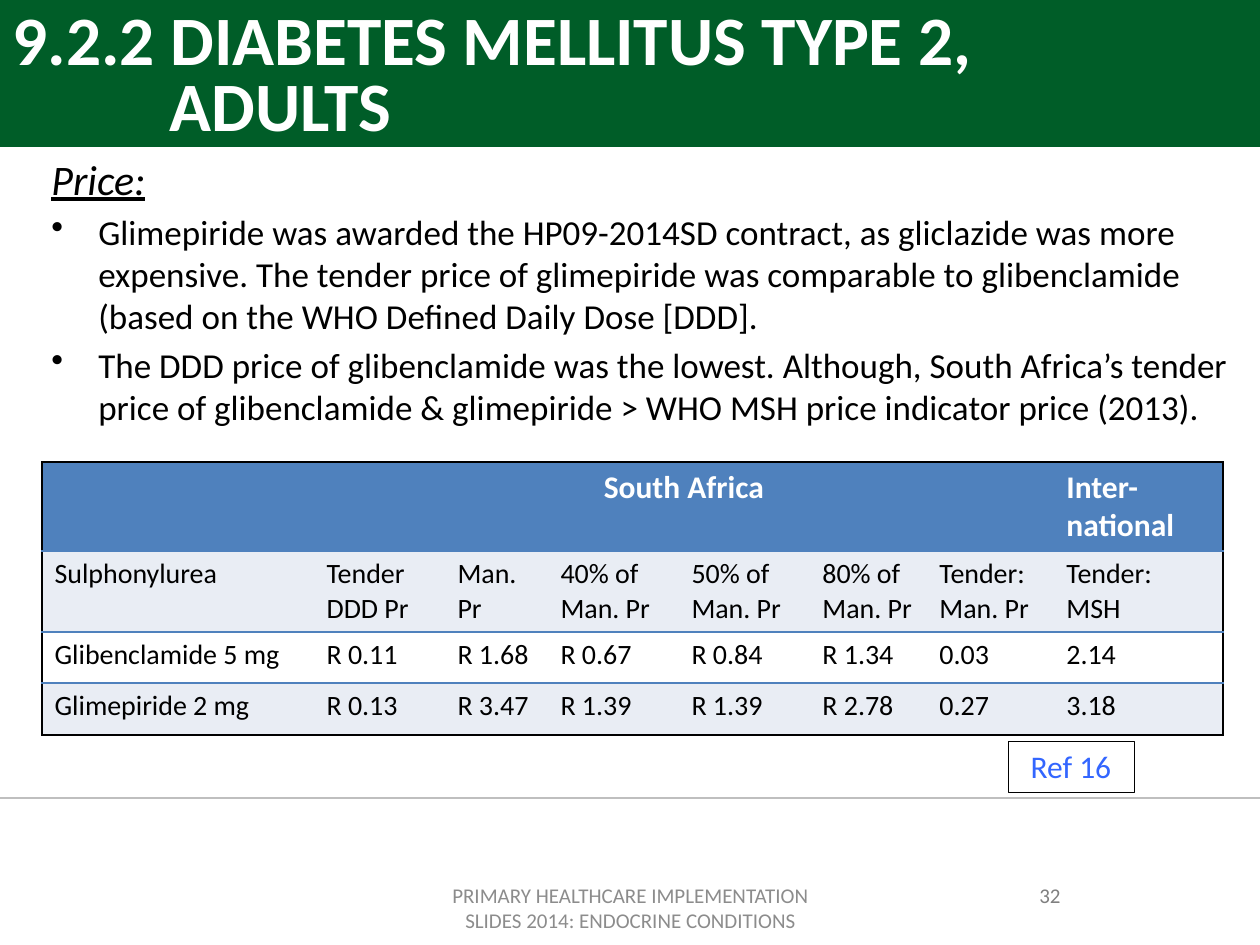
from pptx import Presentation
from pptx.dml.color import RGBColor
from pptx.enum.shapes import MSO_CONNECTOR, MSO_SHAPE
from pptx.enum.text import MSO_ANCHOR, PP_ALIGN
from pptx.oxml.ns import qn
from pptx.util import Pt
from lxml import etree

LEFT, CENTER = PP_ALIGN.LEFT, PP_ALIGN.CENTER
TOP, MIDDLE = MSO_ANCHOR.TOP, MSO_ANCHOR.MIDDLE
RECTANGLE, STRAIGHT = MSO_SHAPE.RECTANGLE, MSO_CONNECTOR.STRAIGHT
FONT = "Calibri"
PX = 914400 / 126

GREEN = RGBColor(0x00, 0x5D, 0x28)
BLUE = RGBColor(0x4F, 0x81, 0xBD)
PALE = RGBColor(0xE9, 0xED, 0xF4)
LINK = RGBColor(0x33, 0x66, 0xFF)
WHITE = RGBColor(0xFF, 0xFF, 0xFF)
BLACK = RGBColor(0, 0, 0)
RULE = RGBColor(0xBF, 0xBF, 0xBF)
FOOTER_GRAY = RGBColor(0x8C, 0x8C, 0x8C)
NUMBER_GRAY = RGBColor(0x80, 0x80, 0x80)

# Content
TITLE = ["9.2.2 DIABETES MELLITUS TYPE 2,", "ADULTS"]
HEADING = "Price:"
BULLETS = [
    "Glimepiride was awarded the HP09-2014SD contract, as gliclazide was more "
    "expensive. The tender price of glimepiride was comparable to glibenclamide "
    "(based on the WHO Defined Daily Dose [DDD].",
    "The DDD price of glibenclamide was the lowest. Although, South Africa’s tender "
    "price of glibenclamide & glimepiride > WHO MSH price indicator price (2013).",
]
PRICES = [
    ["", "South Africa", "", "", "", "", "", "Inter-\nnational"],
    ["Sulphonylurea", "Tender DDD Pr", "Man. Pr", "40% of Man. Pr",
     "50% of Man. Pr", "80% of Man. Pr", "Tender: Man. Pr", "Tender: MSH"],
    ["Glibenclamide 5 mg", "R 0.11", "R 1.68", "R 0.67", "R 0.84", "R 1.34", "0.03", "2.14"],
    ["Glimepiride 2 mg", "R 0.13", "R 3.47", "R 1.39", "R 1.39", "R 2.78", "0.27", "3.18"],
]
COLUMN_WIDTHS = [272, 131, 103, 131, 131, 117, 127, 169]
ROW_HEIGHTS = [89, 81, 51, 52]
ROW_FILLS = [BLUE, PALE, WHITE, PALE]
FOOTER = "PRIMARY HEALTHCARE IMPLEMENTATION SLIDES 2014: ENDOCRINE CONDITIONS"


def px(*lengths):
    return [round(length * PX) for length in lengths]


def write(frame, text, size, color, align=LEFT, bold=False, italic=False,
          underline=False, before=0, spacing=None, margin=0, indent=0, bullet=None):
    """Add one paragraph, using the empty first one if there is one."""
    para = frame.paragraphs[0]
    if para.runs:
        para = frame.add_paragraph()
    para.alignment, para.space_before = align, Pt(before)
    if spacing:
        para.line_spacing = spacing
    properties = para._p.get_or_add_pPr()
    properties.set("marL", str(px(margin)[0]))
    properties.set("indent", str(px(indent)[0]))
    if bullet:
        etree.SubElement(properties, qn("a:buChar"), char=bullet)
    span = para.add_run()
    span.text = text
    font = span.font
    font.name, font.size, font.color.rgb = FONT, Pt(size), color
    font.bold, font.italic, font.underline = bold, italic, underline


def text_box(slide, *place):
    frame = slide.shapes.add_textbox(*px(*place)).text_frame
    frame.word_wrap = True
    return frame


def add_box(slide, *place):
    box = slide.shapes.add_shape(RECTANGLE, *px(*place))
    box.shadow.inherit = False
    return box


def set_border(cell, side, color):
    properties = cell._tc.get_or_add_tcPr()
    line = etree.SubElement(properties, qn("a:ln" + side), w=str(Pt(1)))
    if color is None:
        etree.SubElement(line, qn("a:noFill"))
    else:
        fill = etree.SubElement(line, qn("a:solidFill"))
        etree.SubElement(fill, qn("a:srgbClr"), val=str(color))


def add_price_table(slide):
    rows, columns = len(PRICES), len(COLUMN_WIDTHS)
    place = px(42, 462, sum(COLUMN_WIDTHS), sum(ROW_HEIGHTS))
    table = slide.shapes.add_table(rows, columns, *place).table
    for column, width in zip(table.columns, px(*COLUMN_WIDTHS)):
        column.width = width
    for row, height in zip(table.rows, px(*ROW_HEIGHTS)):
        row.height = height
    table.cell(0, 1).merge(table.cell(0, 6))
    for r, values in enumerate(PRICES):
        for c, value in enumerate(values):
            cell = table.cell(r, c)
            set_border(cell, "L", BLACK if c == 0 else None)
            set_border(cell, "R", BLACK if c == columns - 1 else None)
            set_border(cell, "T", BLACK if r == 0 else BLUE)
            set_border(cell, "B", BLACK if r == rows - 1 else BLUE)
            cell.fill.solid()
            cell.fill.fore_color.rgb = ROW_FILLS[r]
            header = r == 0
            for line in value.splitlines():
                write(cell.text_frame, line, 18 if header else 16,
                      WHITE if header else BLACK, bold=header,
                      align=CENTER if cell.is_merge_origin else LEFT)


def main():
    deck = Presentation()
    deck.slide_width, deck.slide_height = px(1260, 945)
    slide = deck.slides.add_slide(deck.slide_layouts[5])
    title = slide.shapes.title

    # Title band, placed behind the title
    band = add_box(slide, 0, 0, 1260, 147)
    band.fill.solid()
    band.fill.fore_color.rgb = GREEN
    band.line.fill.background()
    title._element.addprevious(band._element)

    # Title
    title.left, title.top, title.width, title.height = px(0, 0, 1197, 157)
    title.text_frame.vertical_anchor = MIDDLE
    for line, margin in zip(TITLE, (0, 157)):
        write(title.text_frame, line, 39.6, WHITE, bold=True, spacing=0.8, margin=margin)

    # Rule and footer
    rule = slide.shapes.add_connector(STRAIGHT, *px(0, 798, 1260, 798))
    rule.line.color.rgb, rule.line.width = RULE, Pt(0.75)
    etree.SubElement(rule._element.spPr, qn("a:effectLst"))
    write(text_box(slide, 431, 876, 399, 50), FOOTER, 12, FOOTER_GRAY, align=CENTER)
    write(text_box(slide, 903, 876, 294, 50), "32", 12, NUMBER_GRAY, align=CENTER)

    # Body
    body = text_box(slide, 39, 147, 1221, 669)
    hanging = {"margin": 47, "indent": -47}
    write(body, HEADING, 24, BLACK, italic=True, underline=True, before=5, **hanging)
    for text in BULLETS:
        write(body, text, 20, BLACK, before=4, bullet="•", **hanging)

    add_price_table(slide)

    # Reference
    reference = add_box(slide, 1008, 741, 126, 51)
    reference.fill.background()
    reference.line.color.rgb, reference.line.width = BLACK, Pt(0.25)
    reference.text_frame.vertical_anchor = TOP
    write(reference.text_frame, "Ref 16", 18, LINK, align=CENTER)

    deck.save("out.pptx")


if __name__ == "__main__":
    main()
